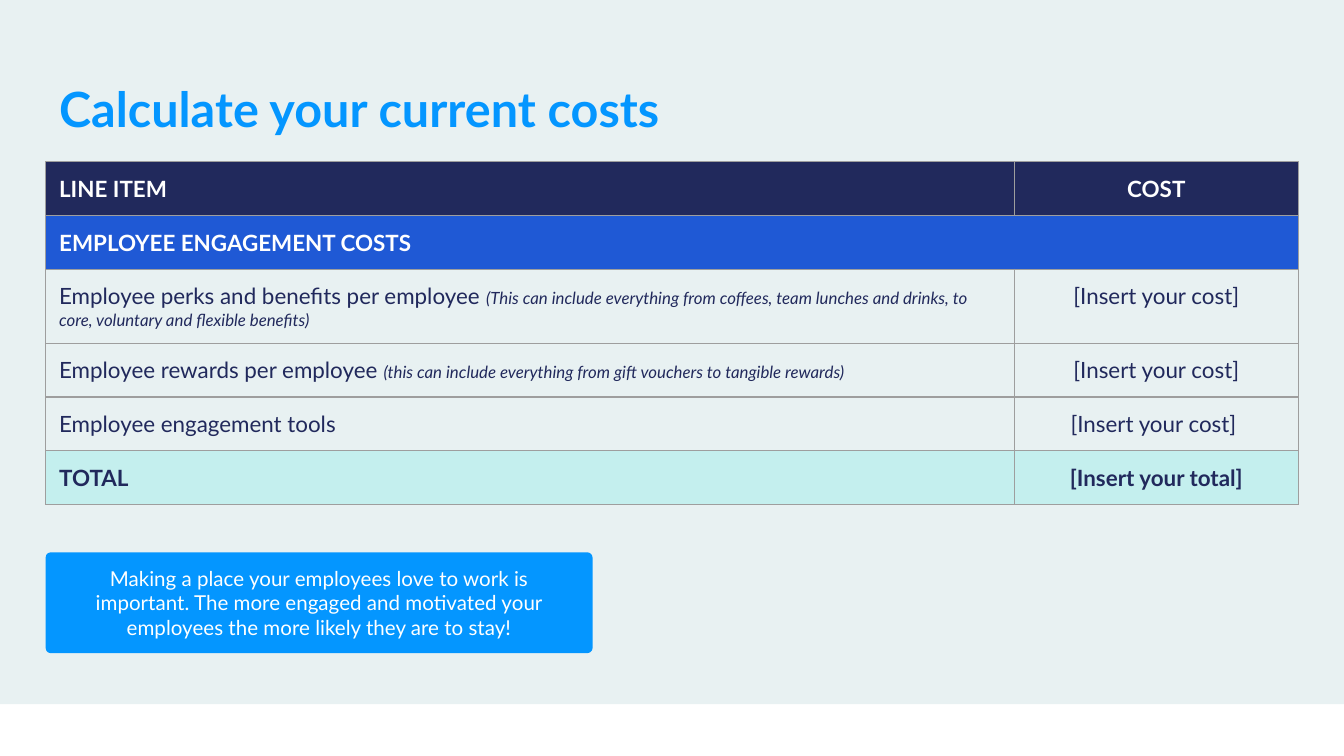
from dataclasses import dataclass
from typing import Optional

from lxml import etree
from pptx import Presentation
from pptx.dml.color import RGBColor
from pptx.enum.shapes import MSO_SHAPE
from pptx.enum.text import MSO_ANCHOR, MSO_AUTO_SIZE, PP_ALIGN
from pptx.oxml.ns import qn
from pptx.util import Pt

RECTANGLE, ROUNDED = MSO_SHAPE.RECTANGLE, MSO_SHAPE.ROUNDED_RECTANGLE
LEFT, CENTER = PP_ALIGN.LEFT, PP_ALIGN.CENTER
TOP, MIDDLE = MSO_ANCHOR.TOP, MSO_ANCHOR.MIDDLE
NO_AUTOFIT = MSO_AUTO_SIZE.NONE

COLORS = {
    "backdrop": "E8F1F2", "bright": "0496FF", "navy": "21295C", "section": "1F59D5",
    "total": "C4EFEE", "white": "FFFFFF", "callout_text": "FEFFFF", "grid": "9E9E9E",
}
FONT = "Lato"
INSET = 7.2
MARGIN = 24.5
CONTENT_WIDTH = 671
COLUMN_WIDTHS = (519, 152)
ROW_HEIGHT, TALL_ROW_HEIGHT = 28.7, 39.6
BORDER_SIDES = ("a:lnL", "a:lnR", "a:lnT", "a:lnB")


@dataclass
class CostRow:
    item: str
    cost: Optional[str] = None  # None lets the item span both columns
    note: str = ""
    fill: Optional[str] = None
    color: str = "navy"
    bold: bool = False
    height: float = ROW_HEIGHT


COST_ROWS = [
    CostRow("LINE ITEM", "COST", fill="navy", color="white", bold=True),
    CostRow("EMPLOYEE ENGAGEMENT COSTS", fill="section", color="white", bold=True),
    CostRow("Employee perks and benefits per employee ", "[Insert your cost]",
            note="(This can include everything from coffees, team lunches and drinks, "
                 "to core, voluntary and flexible benefits)", height=TALL_ROW_HEIGHT),
    CostRow("Employee rewards per employee ", "[Insert your cost]",
            note="(this can include everything from gift vouchers to tangible rewards)"),
    CostRow("Employee engagement tools", "[Insert your cost] "),
    CostRow("TOTAL", "[Insert your total]", fill="total", bold=True),
]


def rgb(name: str) -> RGBColor:
    return RGBColor.from_string(COLORS[name])


def add_run(paragraph, text: str, size: float, color: str,
            bold: bool = False, italic: bool = False) -> None:
    run = paragraph.add_run()
    run.text = text
    formats = {"name": FONT, "size": Pt(size), "bold": bold, "italic": italic}
    for attribute, value in formats.items():
        setattr(run.font, attribute, value)
    run.font.color.rgb = rgb(color)


def set_insets(target, anchor) -> None:
    formats = {f"margin_{side}": Pt(INSET) for side in ("left", "right", "top", "bottom")}
    formats["vertical_anchor"] = anchor
    for attribute, value in formats.items():
        setattr(target, attribute, value)


def add_panel(slide, preset, left: float, top: float, width: float, height: float, fill: str):
    panel = slide.shapes.add_shape(preset, Pt(left), Pt(top), Pt(width), Pt(height))
    panel.shadow.inherit = False
    panel.fill.solid()
    panel.fill.fore_color.rgb = rgb(fill)
    panel.line.fill.background()
    return panel


def style_cell(cell, fill: Optional[str]) -> None:
    set_insets(cell, TOP)
    properties = cell._tc.get_or_add_tcPr()
    for side in BORDER_SIDES:
        border = etree.SubElement(properties, qn(side), w=str(Pt(0.75)))
        solid = etree.SubElement(border, qn("a:solidFill"))
        etree.SubElement(solid, qn("a:srgbClr"), val=COLORS["grid"])
    if fill:
        cell.fill.solid()
        cell.fill.fore_color.rgb = rgb(fill)
    else:
        cell.fill.background()


def add_cost_table(slide, top: float, rows: list[CostRow]) -> None:
    height = sum(row.height for row in rows)
    table = slide.shapes.add_table(len(rows), len(COLUMN_WIDTHS), Pt(MARGIN), Pt(top),
                                   Pt(CONTENT_WIDTH), Pt(height)).table
    table.first_row = table.horz_banding = False
    for column, width in zip(table.columns, COLUMN_WIDTHS):
        column.width = Pt(width)
    for index, row in enumerate(rows):
        table.rows[index].height = Pt(row.height)
        item_cell, cost_cell = table.cell(index, 0), table.cell(index, 1)
        for cell in (item_cell, cost_cell):
            style_cell(cell, row.fill)
        item = item_cell.text_frame.paragraphs[0]
        add_run(item, row.item, 12, row.color, row.bold)
        if row.note:
            add_run(item, row.note, 9, row.color, italic=True)
        if row.cost is None:
            item_cell.merge(cost_cell)
        else:
            cost = cost_cell.text_frame.paragraphs[0]
            cost.alignment = CENTER
            add_run(cost, row.cost, 12, row.color, row.bold)


def main() -> None:
    presentation = Presentation()
    presentation.slide_width, presentation.slide_height = Pt(720), Pt(405)
    slide = presentation.slides.add_slide(presentation.slide_layouts[5])

    # Backdrop, sent behind the title
    backdrop = add_panel(slide, RECTANGLE, 0, 0, 720, 377.3, "backdrop")
    slide.shapes._spTree.insert(2, backdrop._element)

    # Title
    title = slide.shapes.title
    title.left, title.top, title.width, title.height = (
        Pt(MARGIN), Pt(35.3), Pt(CONTENT_WIDTH), Pt(45.4))
    set_insets(title.text_frame, TOP)
    title.text_frame.auto_size = NO_AUTOFIT
    heading = title.text_frame.paragraphs[0]
    heading.alignment = LEFT
    add_run(heading, "Calculate your current costs", 26, "bright", bold=True)

    # Cost table
    add_cost_table(slide, 86.6, COST_ROWS)

    # Callout
    callout = add_panel(slide, ROUNDED, MARGIN, 295.9, 293, 54, "bright")
    callout.adjustments[0] = 0.05
    callout.text_frame.word_wrap = True
    set_insets(callout.text_frame, MIDDLE)
    message = callout.text_frame.paragraphs[0]
    message.alignment = CENTER
    add_run(message, "Making a place your employees love to work is important. The more engaged "
                     "and motivated your employees the more likely they are to stay!",
            11, "callout_text")

    presentation.save("out.pptx")


if __name__ == "__main__":
    main()
